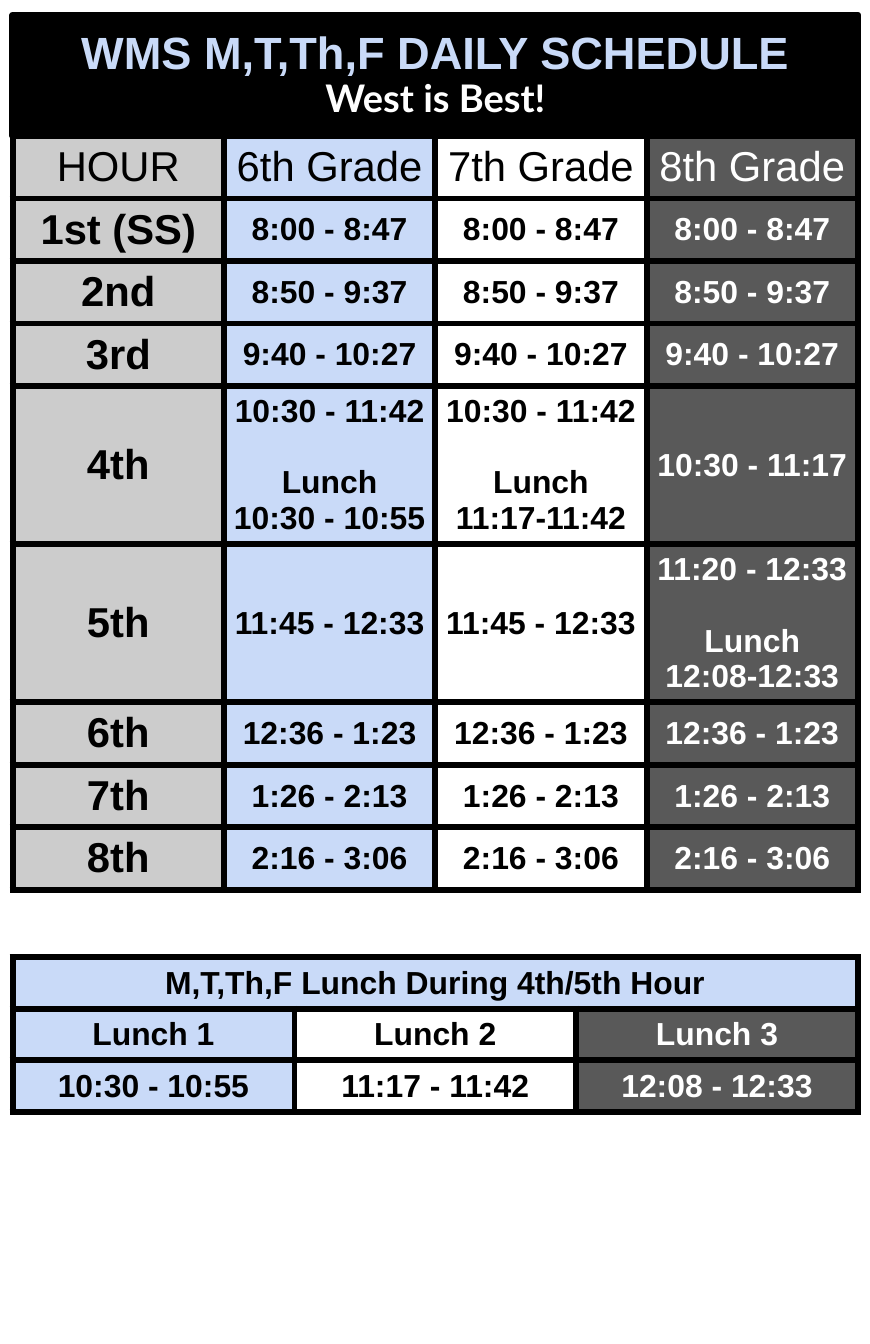
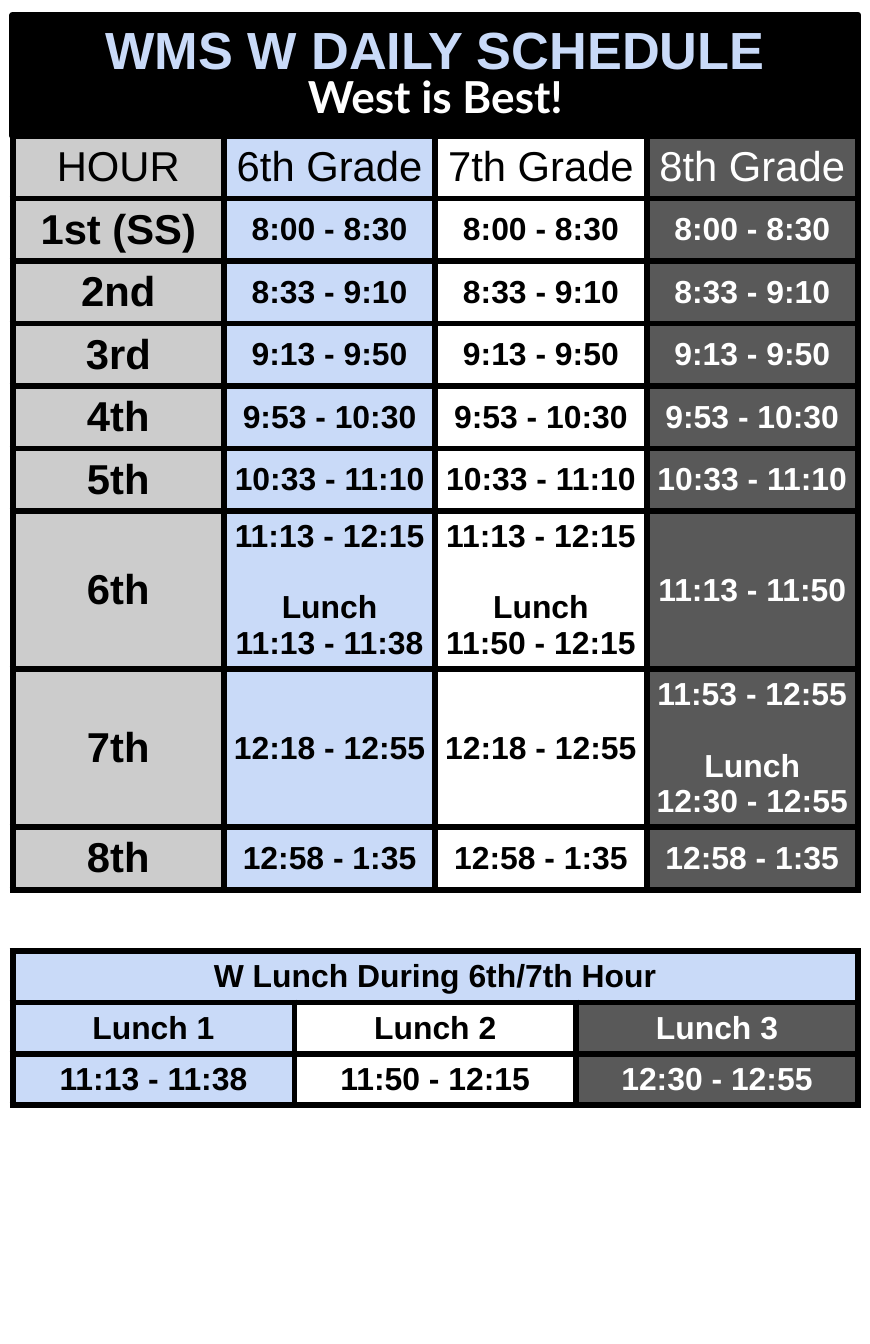
from lxml.etree import SubElement
from pptx import Presentation
from pptx.dml.color import RGBColor
from pptx.enum.text import MSO_ANCHOR as Anchor, MSO_AUTO_SIZE as AutoSize, PP_ALIGN as Align
from pptx.oxml.ns import qn
from pptx.util import Pt

COLORS = {"black": "000000", "white": "FFFFFF", "blue": "C9DAF8",
          "grey": "CCCCCC", "charcoal": "595959"}
LEFT, WIDTH = 11.5, 769.6
TITLE_TOP, TITLE_HEIGHT = 13.7, 110.1
BORDER = 6
SHORT_ROW, TALL_ROW, LUNCH_ROW = 56.85, 144, 46.8
HOUR_SIZE, TIME_SIZE = 38, 29
GRADE_FILLS = ["blue", "white", "charcoal"]
GRADES = ("6th Grade", "7th Grade", "8th Grade")

# Each hour has one time for all grades, or one per grade
SCHEDULES = [
    {
        "title": "WMS M,T,Th,F DAILY SCHEDULE",
        "title_sizes": (41.1, 34.6),
        "title_spacing": 0.9,
        "hours": [
            ("1st (SS)", "8:00 - 8:47"),
            ("2nd", "8:50 - 9:37"),
            ("3rd", "9:40 - 10:27"),
            ("4th", ("10:30 - 11:42\nLunch\n10:30 - 10:55",
                     "10:30 - 11:42\nLunch\n11:17-11:42",
                     "10:30 - 11:17")),
            ("5th", ("11:45 - 12:33", "11:45 - 12:33",
                     "11:20 - 12:33\nLunch\n12:08-12:33")),
            ("6th", "12:36 - 1:23"),
            ("7th", "1:26 - 2:13"),
            ("8th", "2:16 - 3:06"),
        ],
        "lunch_top": 871.9,
        "lunch_title": "M,T,Th,F Lunch During 4th/5th Hour",
        "lunches": ("10:30 - 10:55", "11:17 - 11:42", "12:08 - 12:33"),
    },
    {
        "title": "WMS W DAILY SCHEDULE",
        "title_sizes": (47.6, 40.1),
        "title_spacing": 0.8,
        "hours": [
            ("1st (SS)", "8:00 - 8:30"),
            ("2nd", "8:33 - 9:10"),
            ("3rd", "9:13 - 9:50"),
            ("4th", "9:53 - 10:30"),
            ("5th", "10:33 - 11:10"),
            ("6th", ("11:13 - 12:15\nLunch\n11:13 - 11:38",
                     "11:13 - 12:15\nLunch\n11:50 - 12:15",
                     "11:13 - 11:50")),
            ("7th", ("12:18 - 12:55", "12:18 - 12:55",
                     "11:53 - 12:55\nLunch\n12:30 - 12:55")),
            ("8th", "12:58 - 1:35"),
        ],
        "lunch_top": 866.2,
        "lunch_title": "W Lunch During 6th/7th Hour",
        "lunches": ("11:13 - 11:38", "11:50 - 12:15", "12:30 - 12:55"),
    },
]


def write(frame, text, size, color="black", font="Arial", bold=True, spacing=None, lunch_gap=0):
    """Add centred lines to a frame, starting in its first paragraph while that is empty."""
    for line in text.split("\n"):
        first = frame.paragraphs[0]
        paragraph = frame.add_paragraph() if first.runs else first
        paragraph.alignment = Align.CENTER
        paragraph.space_before = Pt(lunch_gap if line == "Lunch" else 0)
        paragraph.line_spacing = spacing
        run = paragraph.add_run()
        run.text = line
        run.font.name, run.font.size, run.font.bold = font, Pt(size), bold
        run.font.color.rgb = RGBColor.from_string(COLORS[color])


def add_grid(slide, top, rows, heights, fills, header_bold=True, hour_column=False):
    """Add a table with black rules and one fill per column."""
    grid = slide.shapes.add_table(len(rows), len(fills), Pt(LEFT), Pt(top),
                                  Pt(WIDTH), Pt(sum(heights))).table
    for column in grid.columns:
        column.width = Pt(WIDTH / len(fills))
    for r, (texts, height) in enumerate(zip(rows, heights)):
        grid.rows[r].height = Pt(height)
        for c, fill in enumerate(fills):
            cell = grid.cell(r, c)
            cell.vertical_anchor = Anchor.MIDDLE
            cell.margin_left = cell.margin_right = Pt(7.2)
            cell.margin_top = cell.margin_bottom = Pt(7.2)
            # Borders come before the fill in the cell properties
            properties = cell._tc.get_or_add_tcPr()
            for side in ("a:lnL", "a:lnR", "a:lnT", "a:lnB"):
                rule = SubElement(properties, qn(side), w=str(Pt(BORDER)))
                solid = SubElement(rule, qn("a:solidFill"))
                SubElement(solid, qn("a:srgbClr"), val=COLORS["black"])
            cell.fill.solid()
            cell.fill.fore_color.rgb = RGBColor.from_string(COLORS[fill])
            if c < len(texts):
                large = hour_column and (r == 0 or c == 0)
                write(cell.text_frame, texts[c], HOUR_SIZE if large else TIME_SIZE,
                      color="white" if fill == "charcoal" else "black",
                      bold=header_bold or r > 0, lunch_gap=32.4)
    return grid


deck = Presentation()
deck.slide_width, deck.slide_height = Pt(792), Pt(1224)
layout = deck.slide_layouts[5]

# The title band has one place for all slides
band = layout.placeholders[0]
band.left, band.top = Pt(LEFT), Pt(TITLE_TOP)
band.width, band.height = Pt(WIDTH), Pt(TITLE_HEIGHT)

for schedule in SCHEDULES:
    slide = deck.slides.add_slide(layout)

    # Title band
    title = slide.shapes.title
    title.fill.solid()
    title.fill.fore_color.rgb = RGBColor.from_string(COLORS["black"])
    title.line.color.rgb = RGBColor.from_string(COLORS["black"])
    title.line.width = Pt(BORDER)
    frame = title.text_frame
    frame.word_wrap, frame.auto_size = True, AutoSize.NONE
    frame.vertical_anchor = Anchor.MIDDLE
    frame.margin_left = frame.margin_right = Pt(12.2)
    frame.margin_top = frame.margin_bottom = Pt(12.2)
    title_size, motto_size = schedule["title_sizes"]
    spacing = schedule["title_spacing"]
    write(frame, schedule["title"], title_size, color="blue", spacing=spacing)
    write(frame, "West is Best!", motto_size, color="white", font="Lato", spacing=spacing)

    # Hours by grade
    rows, heights = [("HOUR", *GRADES)], [SHORT_ROW]
    for hour, times in schedule["hours"]:
        shared = isinstance(times, str)
        rows.append((hour, *([times] * len(GRADES) if shared else times)))
        heights.append(SHORT_ROW if shared else TALL_ROW)
    add_grid(slide, TITLE_TOP + TITLE_HEIGHT, rows, heights, ["grey", *GRADE_FILLS],
             header_bold=False, hour_column=True)

    # Lunch times
    lunch_rows = [(schedule["lunch_title"],), ("Lunch 1", "Lunch 2", "Lunch 3"),
                  schedule["lunches"]]
    lunch_grid = add_grid(slide, schedule["lunch_top"], lunch_rows,
                          [LUNCH_ROW] * len(lunch_rows), GRADE_FILLS)
    lunch_grid.cell(0, 0).merge(lunch_grid.cell(0, 2))

deck.save("out.pptx")
